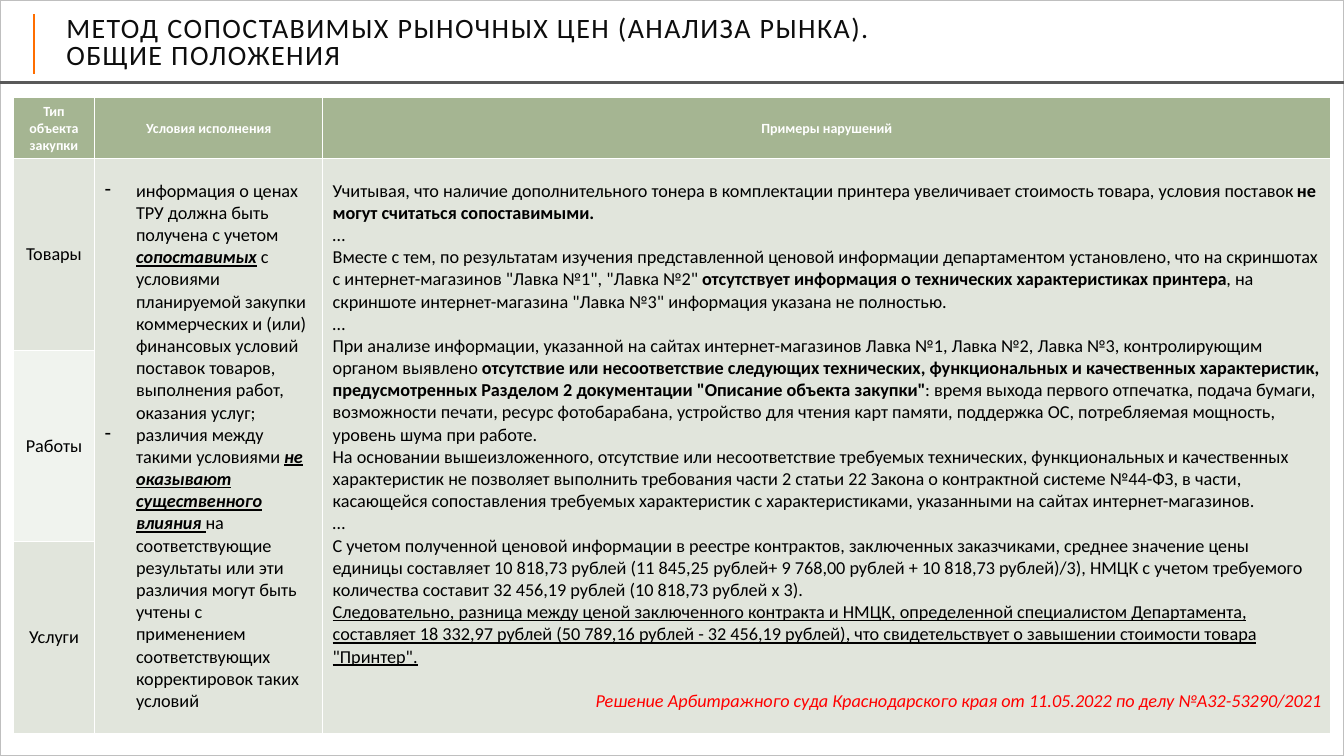
from lxml.etree import SubElement
from pptx import Presentation
from pptx.dml.color import RGBColor
from pptx.enum.shapes import MSO_CONNECTOR, MSO_SHAPE
from pptx.enum.text import MSO_ANCHOR, PP_ALIGN
from pptx.oxml.ns import qn
from pptx.util import Inches, Pt

TITLE = ["МЕТОД СОПОСТАВИМЫХ РЫНОЧНЫХ ЦЕН (АНАЛИЗА РЫНКА).", "ОБЩИЕ ПОЛОЖЕНИЯ"]
HEADERS = ["Тип объекта закупки", "Условия исполнения", "Примеры нарушений"]
TYPES = [("Товары", "E1E5DC"), ("Работы", "F0F3EE"), ("Услуги", "E1E5DC")]
CONDITIONS = [
    [("информация о ценах ТРУ должна быть получена с учетом ", ""),
     ("сопоставимых", "biu"),
     (" с условиями планируемой закупки коммерческих и (или) финансовых условий "
      "поставок товаров, выполнения работ, оказания услуг;", "")],
    [("различия между такими условиями ", ""),
     ("не оказывают существенного влияния ", "biu"),
     ("на соответствующие результаты или эти различия могут быть учтены "
      "с применением соответствующих корректировок таких условий", "")],
]
EXAMPLES = [
    [("Учитывая, что наличие дополнительного тонера в комплектации принтера "
      "увеличивает стоимость товара, условия поставок ", ""),
     ("не могут считаться сопоставимыми.", "b")],
    [("…", "")],
    [("Вместе с тем, по результатам изучения представленной ценовой информации "
      "департаментом установлено, что на скриншотах с интернет-магазинов "
      "\"Лавка №1\", \"Лавка №2\" ", ""),
     ("отсутствует информация о технических характеристиках принтера", "b"),
     (", на скриншоте интернет-магазина \"Лавка №3\" информация указана не полностью.", "")],
    [("…", "")],
    [("При анализе информации, указанной на сайтах интернет-магазинов Лавка №1, "
      "Лавка №2, Лавка №3, контролирующим органом выявлено ", ""),
     ("отсутствие или несоответствие следующих технических, функциональных и "
      "качественных характеристик, предусмотренных Разделом 2 документации "
      "\"Описание объекта закупки\"", "b"),
     (": время выхода первого отпечатка, подача бумаги, возможности печати, ресурс "
      "фотобарабана, устройство для чтения карт памяти, поддержка ОС, потребляемая "
      "мощность, уровень шума при работе.", "")],
    [("На основании вышеизложенного, отсутствие или несоответствие требуемых "
      "технических, функциональных и качественных характеристик не позволяет "
      "выполнить требования части 2 статьи 22 Закона о контрактной системе №44-ФЗ, "
      "в части, касающейся сопоставления требуемых характеристик с "
      "характеристиками, указанными на сайтах интернет-магазинов.", "")],
    [("…", "")],
    [("С учетом полученной ценовой информации в реестре контрактов, заключенных "
      "заказчиками, среднее значение цены единицы составляет 10 818,73 рублей "
      "(11 845,25 рублей+ 9 768,00 рублей + 10 818,73 рублей)/3), НМЦК с учетом "
      "требуемого количества составит 32 456,19 рублей (10 818,73 рублей х 3).", "")],
    [("Следовательно, разница между ценой заключенного контракта и НМЦК, "
      "определенной специалистом Департамента, составляет 18 332,97 рублей "
      "(50 789,16 рублей - 32 456,19 рублей), что свидетельствует о завышении "
      "стоимости товара \"Принтер\".", "u")],
]
RULING = "Решение Арбитражного суда Краснодарского края от 11.05.2022 по делу №А32-53290/2021"
COLS = [0.81, 2.26, 10]
ROWS = [0.6, 1.9, 1.9, 1.9]
LINES = [(0.34, 0.73, 0.34, 0.14, "FF6E00", 1.75),
         (13.33, 0.82, 0, 0.82, "595959", 2)]


def rgb(value):
    return RGBColor.from_string(value)


def add_run(p, text, style="", size=13, color="000000"):
    r = p.add_run()
    r.text = text
    font = r.font
    font.name, font.size, font.color.rgb = "Calibri", Pt(size), rgb(color)
    font.bold, font.italic, font.underline = (mark in style for mark in "biu")
    return r


def add_paragraphs(tf, paragraphs, bullet=False):
    for i, runs in enumerate(paragraphs):
        p = tf.add_paragraph() if i else tf.paragraphs[0]
        if bullet:
            pPr = p._p.get_or_add_pPr()
            pPr.set("marL", str(Inches(0.31)))
            pPr.set("indent", str(-Inches(0.31)))
            SubElement(pPr, qn("a:buChar")).set("char", "-")
        for text, style in runs:
            add_run(p, text, style)


def add_label(cell, text, *look):
    p = cell.text_frame.paragraphs[0]
    p.alignment = PP_ALIGN.CENTER
    add_run(p, text, *look)


def paint(cell, color):
    cell.vertical_anchor = MSO_ANCHOR.MIDDLE
    cell.fill.solid()
    cell.fill.fore_color.rgb = rgb(color)


prs = Presentation()
prs.slide_width, prs.slide_height = Inches(13.33), Inches(7.5)
s = prs.slides.add_slide(prs.slide_layouts[6])

frame = s.shapes.add_shape(MSO_SHAPE.RECTANGLE, 0, 0, prs.slide_width, prs.slide_height)
frame.shadow.inherit = False
frame.fill.background()
frame.line.color.rgb, frame.line.width = rgb("BFBFBF"), Pt(1.25)

for *ends, color, width in LINES:
    line = s.shapes.add_connector(MSO_CONNECTOR.STRAIGHT, *map(Inches, ends))
    line.line.color.rgb, line.line.width = rgb(color), Pt(width)
    SubElement(line._element.spPr, qn("a:effectLst"))

table = s.shapes.add_table(len(ROWS), len(COLS), Inches(0.13), Inches(0.97),
                           Inches(sum(COLS)), Inches(sum(ROWS))).table
table.horz_banding = False
for column, width in zip(table.columns, COLS):
    column.width = Inches(width)
for row, height in zip(table.rows, ROWS):
    row.height = Inches(height)

for c, text in enumerate(HEADERS):
    paint(table.cell(0, c), "A5B592")
    add_label(table.cell(0, c), text, "b", 10, "FFFFFF")
for r, (text, color) in enumerate(TYPES, 1):
    for c in range(len(COLS)):
        paint(table.cell(r, c), "E1E5DC" if c else color)
    add_label(table.cell(r, 0), text)
for c, paragraphs in enumerate([CONDITIONS, EXAMPLES], 1):
    table.cell(1, c).merge(table.cell(3, c))
    add_paragraphs(table.cell(1, c).text_frame, paragraphs, bullet=c == 1)

p = table.cell(1, 2).text_frame.add_paragraph()
p.alignment = PP_ALIGN.RIGHT
p.space_before = Pt(16)
add_run(p, RULING, "i", color="FF0000")

tf = s.shapes.add_textbox(Inches(0.56), Inches(0.14), Inches(9.1), Inches(0.59)).text_frame
tf.word_wrap = True
tf.vertical_anchor = MSO_ANCHOR.MIDDLE
p = tf.paragraphs[0]
p.line_spacing = 0.8
for i, text in enumerate(TITLE):
    if i:
        p.add_line_break()
    r = add_run(p, text, "", 20, "0D0D0D")
    r.font._element.set("spc", "100")

prs.save("out.pptx")
